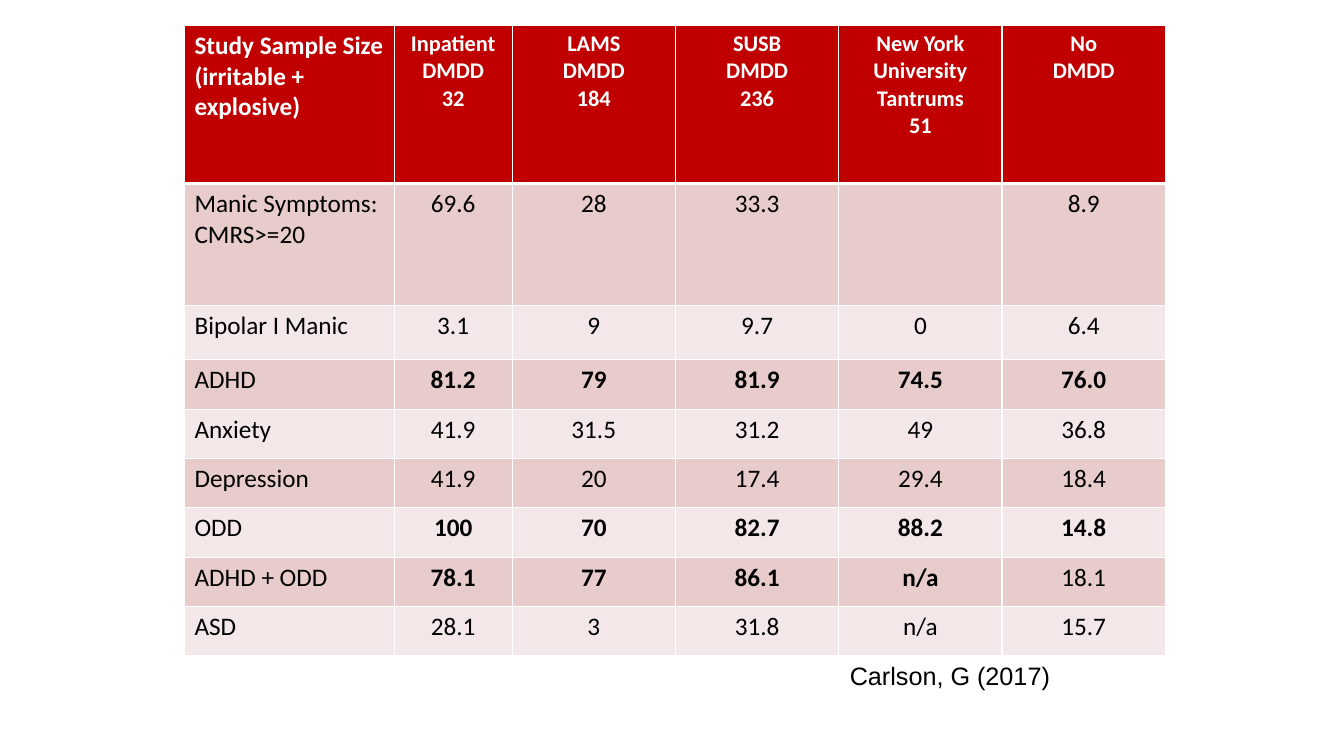
from lxml.etree import SubElement
from pptx import Presentation
from pptx.dml.color import RGBColor
from pptx.enum.text import MSO_AUTO_SIZE as AutoSize, PP_ALIGN as Align
from pptx.oxml.ns import qn
from pptx.util import Inches, Pt

COLUMN_WIDTHS = [2.08, 1.17] + [1.62] * 4
ROW_HEIGHTS = [1.57, 1.21, 0.54] + [0.49] * 6
HEADER = [
    "Study Sample Size\n(irritable + explosive)",
    "Inpatient\nDMDD\n32",
    "LAMS\nDMDD\n184",
    "SUSB\nDMDD\n236",
    "New York\nUniversity\nTantrums\n51",
    "No\nDMDD",
]
DIAGNOSES = [
    ["Manic Symptoms:\nCMRS>=20", "69.6", "28", "33.3", "", "8.9"],
    ["Bipolar I Manic", "3.1", "9", "9.7", "0", "6.4"],
    ["ADHD", "81.2", "79", "81.9", "74.5", "76.0"],
    ["Anxiety", "41.9", "31.5", "31.2", "49", "36.8"],
    ["Depression", "41.9", "20", "17.4", "29.4", "18.4"],
    ["ODD", "100", "70", "82.7", "88.2", "14.8"],
    ["ADHD + ODD", "78.1", "77", "86.1", "n/a", "18.1"],
    ["ASD", "28.1", "3", "31.8", "n/a", "15.7"],
]
BOLD_VALUES = {"ADHD": 5, "ODD": 5, "ADHD + ODD": 4}


def color(value):
    return RGBColor.from_string(value)


class SlideBuilder:
    white = "FFFFFF"
    black = "000000"
    header_fill = "C00000"
    band_fills = ["F4E7E7", "E8CCCC"]

    def __init__(self, page):
        self.page = page

    def add_lines(self, frame, text, size, font, ink, bold=False, align=Align.LEFT):
        for index, line in enumerate(text.split("\n")):
            para = frame.paragraphs[0] if index == 0 else frame.add_paragraph()
            para.alignment = align
            span = para.add_run()
            span.text = line
            span.font.name = font
            span.font.size = Pt(size)
            span.font.bold = bold
            span.font.color.rgb = color(ink)

    def borders(self, cell, top, bottom):
        properties = cell._tc.get_or_add_tcPr()
        for side, width in (("L", 1), ("R", 1), ("T", top), ("B", bottom)):
            line = SubElement(properties, qn(f"a:ln{side}"), w=str(Pt(width)))
            fill = SubElement(line, qn("a:solidFill"))
            SubElement(fill, qn("a:srgbClr"), val=self.white)

    def table(self, left, top, rows):
        grid = self.page.shapes.add_table(
            len(ROW_HEIGHTS), len(COLUMN_WIDTHS), Inches(left), Inches(top),
            Inches(sum(COLUMN_WIDTHS)), Inches(sum(ROW_HEIGHTS))).table
        for column, width in zip(grid.columns, COLUMN_WIDTHS):
            column.width = Inches(width)
        for row, height in zip(grid.rows, ROW_HEIGHTS):
            row.height = Inches(height)
        for row_index, texts in enumerate(rows):
            for column_index, text in enumerate(texts):
                self.cell(grid.cell(row_index, column_index), text,
                          row_index, column_index, texts[0])

    def cell(self, cell, text, row, column, label):
        header = row == 0
        self.borders(cell, 3 if row == 1 else 1, 3 if header else 1)
        cell.fill.solid()
        cell.fill.fore_color.rgb = color(
            self.header_fill if header else self.band_fills[row % 2])
        if text:
            self.add_lines(
                cell.text_frame, text, 16 if header and column else 18, "Calibri",
                self.white if header else self.black,
                header or 1 <= column <= BOLD_VALUES.get(label, 0),
                Align.CENTER if column else Align.LEFT)

    def text(self, left, top, width, height, text):
        box = self.page.shapes.add_textbox(
            Inches(left), Inches(top), Inches(width), Inches(height))
        box.text_frame.word_wrap = True
        box.text_frame.auto_size = AutoSize.SHAPE_TO_FIT_TEXT
        self.add_lines(box.text_frame, text, 18, "Arial", self.black)


def main():
    deck = Presentation()
    deck.slide_width = Inches(13.33)
    deck.slide_height = Inches(7.5)
    builder = SlideBuilder(deck.slides.add_slide(deck.slide_layouts[6]))
    builder.table(1.83, 0.25, [HEADER] + DIAGNOSES)
    builder.text(8.33, 6.5, 3.17, 0.4, "Carlson, G (2017)")
    deck.save("out.pptx")


if __name__ == "__main__":
    main()
